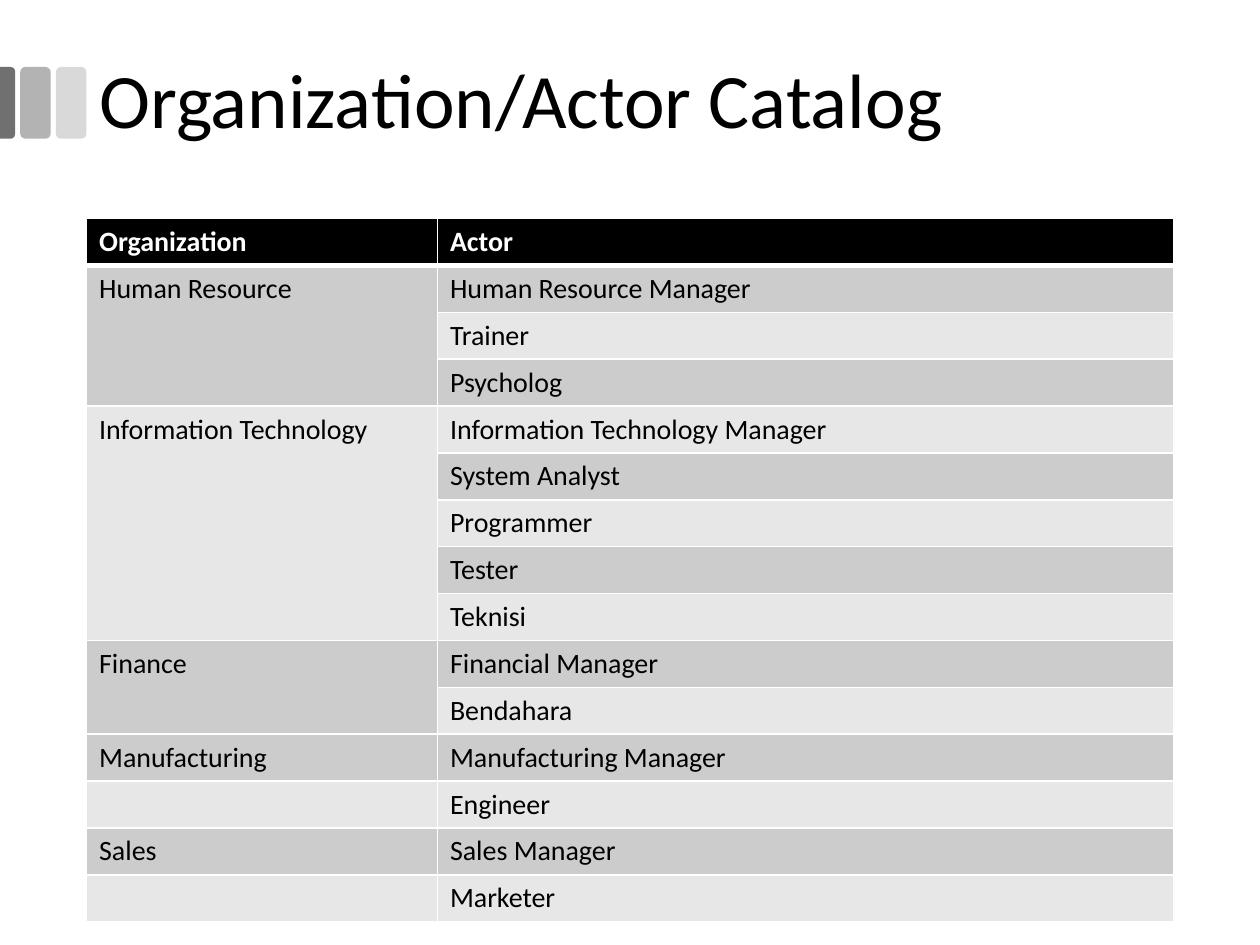
from dataclasses import dataclass

from lxml import etree
from pptx import Presentation
from pptx.dml.color import RGBColor
from pptx.enum import shapes, text
from pptx.oxml import ns
from pptx.util import Pt


@dataclass(frozen=True)
class Theme:
    """Colours and type sizes of the slide."""
    font: str = "Calibri"
    title_size: int = 44
    body_size: int = 16
    ink: str = "000000"
    paper: str = "FFFFFF"
    bands: tuple = ("E7E7E7", "CCCCCC")
    tabs: tuple = ("707070", "B3B3B3", "D9D9D9")


THEME = Theme()
COLUMNS = (200.5, 420.5)
CATALOG = [
    ("Human Resource", ["Human Resource Manager", "Trainer", "Psycholog"], True),
    ("Information Technology",
     ["Information Technology Manager", "System Analyst", "Programmer", "Tester", "Teknisi"], True),
    ("Finance", ["Financial Manager", "Bendahara"], True),
    ("Manufacturing", ["Manufacturing Manager", "Engineer"], False),
    ("Sales", ["Sales Manager", "Marketer"], False),
]


def set_font(p, size, color, bold=False):
    """Format a whole paragraph."""
    p.font.name, p.font.size, p.font.bold = THEME.font, Pt(size), bold
    p.font.color.rgb = RGBColor.from_string(color)


def add_title(s, words, left, top, width, height):
    """Place and format the title placeholder."""
    sp = s.shapes.title
    sp.left, sp.top, sp.width, sp.height = map(Pt, (left, top, width, height))
    tf = sp.text_frame
    tf.text = words
    tf.word_wrap = True
    tf.vertical_anchor = text.MSO_ANCHOR.MIDDLE
    p = tf.paragraphs[0]
    p.alignment, p.line_spacing = text.PP_ALIGN.LEFT, 0.9
    set_font(p, THEME.title_size, THEME.ink)


def add_tab(s, kind, color, left, top, width, height):
    """Draw one plain tab and return it."""
    sp = s.shapes.add_shape(kind, *map(Pt, (left, top, width, height)))
    sp.shadow.inherit = False
    sp.fill.solid()
    sp.fill.fore_color.rgb = RGBColor.from_string(color)
    sp.line.fill.background()
    return sp


def add_tabs(s, left, top, width, height, pitch, edge):
    """Draw two tabs and the cut one that meets the slide edge."""
    dark, *rest = THEME.tabs
    for i, color in enumerate(rest):
        add_tab(s, shapes.MSO_SHAPE.ROUNDED_RECTANGLE, color, left + i * pitch, top, width, height)
    sp = add_tab(s, shapes.MSO_SHAPE.ROUND_2_SAME_RECTANGLE, dark,
                 (edge - height) / 2, top + (height - edge) / 2, height, edge)
    sp.rotation = 90
    sp.adjustments[0], sp.adjustments[1] = 0.29, 0


def set_borders(cell, top, bottom):
    """Give a cell solid borders, in points at top and bottom."""
    tcPr = cell._tc.get_or_add_tcPr()
    for side, weight in (("L", 1), ("R", 1), ("T", top), ("B", bottom)):
        ln = etree.SubElement(tcPr, ns.qn(f"a:ln{side}"), w=str(Pt(weight)))
        fill = etree.SubElement(ln, ns.qn("a:solidFill"))
        etree.SubElement(fill, ns.qn("a:srgbClr"), val=THEME.paper)


def fill_cell(cell, words, row, band):
    """Write and format one cell."""
    header = row == 0
    set_borders(cell, 3 if row == 1 else 1, 3 if header else 1)
    cell.fill.solid()
    cell.fill.fore_color.rgb = RGBColor.from_string(THEME.ink if header else band)
    cell.text = words
    p = cell.text_frame.paragraphs[0]
    set_font(p, THEME.body_size, THEME.paper if header else THEME.ink, header)
    if not words:
        etree.SubElement(p._p, ns.qn("a:endParaRPr"), sz=str(THEME.body_size * 100))


def add_catalog(s, left, top, width, height):
    """Build the table, merging organization cells where they span."""
    rows = [("Organization", "Actor")]
    spans = []
    for name, actors, merged in CATALOG:
        if merged:
            spans.append((len(rows), len(rows) + len(actors) - 1))
        rows += [("" if i else name, actor) for i, actor in enumerate(actors)]
    table = s.shapes.add_table(len(rows), 2, *map(Pt, (left, top, width, height))).table
    for column, size in zip(table.columns, COLUMNS):
        column.width = Pt(size)
    for i, row in enumerate(rows):
        for j, words in enumerate(row):
            fill_cell(table.cell(i, j), words, i, THEME.bands[i % 2])
    for first, last in spans:
        table.cell(first, 0).merge(table.cell(last, 0))


def main():
    """Build the slide and save it."""
    prs = Presentation()
    prs.slide_width, prs.slide_height = Pt(720), Pt(540)
    s = prs.slides.add_slide(prs.slide_layouts[5])
    add_tabs(s, 11.6, 38.3, 17.4, 41, 20.4, 8.6)
    add_title(s, "Organization/Actor Catalog", 49.5, 12.2, 621, 94.3)
    add_catalog(s, 49.5, 124.9, sum(COLUMNS), 396)
    prs.save("out.pptx")


if __name__ == "__main__":
    main()
